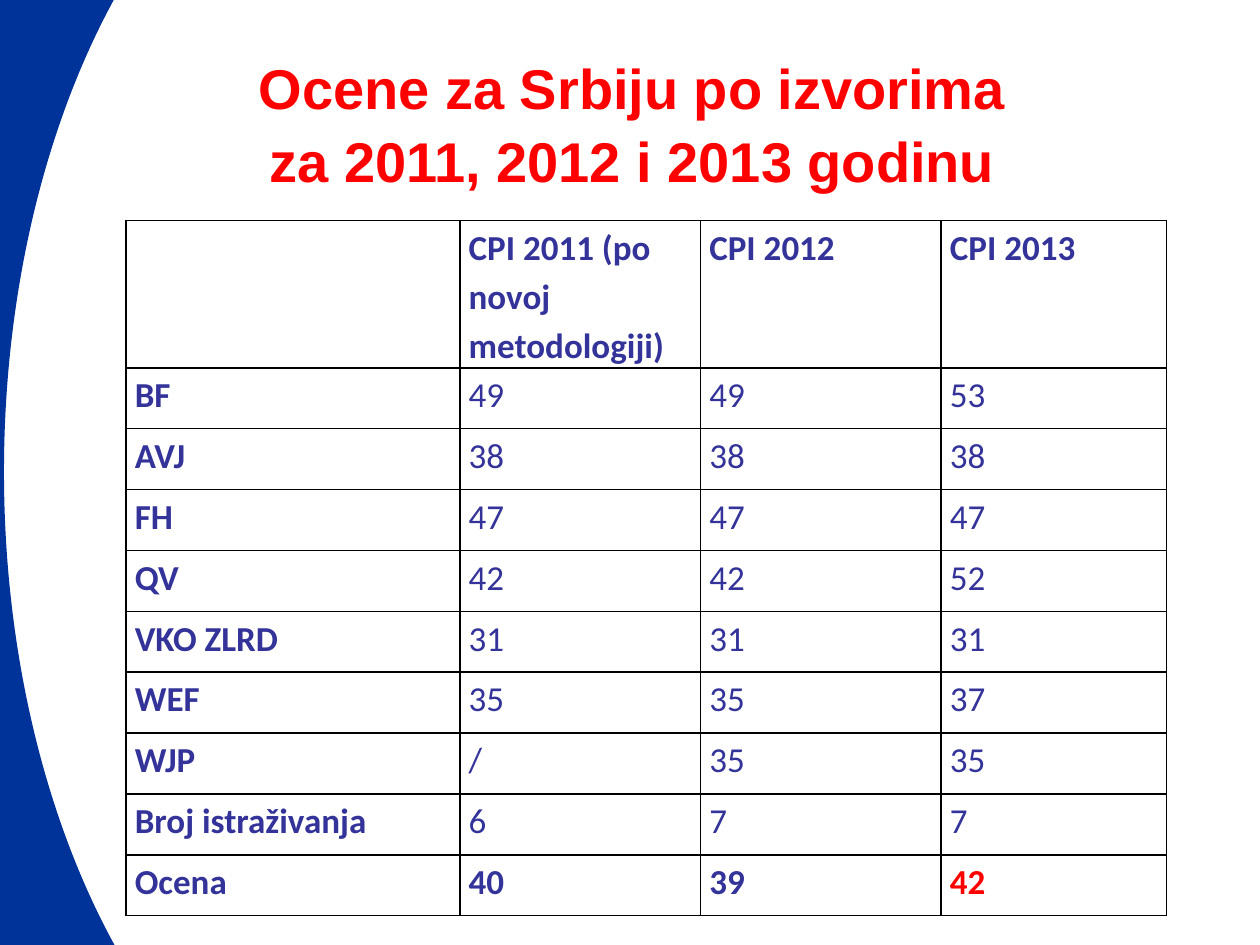
"""Build a slide with Serbia's CPI scores by source for 2011, 2012 and 2013."""
from dataclasses import dataclass

from lxml.etree import SubElement
from pptx import Presentation
from pptx.dml.color import RGBColor
from pptx.enum.shapes import MSO_AUTO_SHAPE_TYPE as ShapeType
from pptx.enum.text import MSO_VERTICAL_ANCHOR as Anchor, PP_PARAGRAPH_ALIGNMENT as Align
from pptx.oxml.ns import qn
from pptx.util import Inches, Pt


@dataclass(frozen=True)
class Theme:
    accent: RGBColor = RGBColor(0x00, 0x33, 0x99)
    body: RGBColor = RGBColor(0x33, 0x33, 0x99)
    highlight: RGBColor = RGBColor(0xFF, 0x00, 0x00)
    border: str = "000000"
    border_width: Pt = Pt(1)
    title_font: str = "Arial"
    table_font: str = "Calibri"
    title_size: Pt = Pt(32)
    title_spacing: Pt = Pt(42)
    table_size: Pt = Pt(20)
    table_spacing: float = 1.15


THEME = Theme()
TITLE = "Ocene za Srbiju po izvorima\vza 2011, 2012 i 2013 godinu"
COLUMN_WIDTHS = (2.65, 1.91, 1.91, 1.79)
HEADER_HEIGHT, BODY_HEIGHT = 1.17, 4.35
SCORES = (
    ("", "CPI 2011 (po novoj metodologiji)", "CPI 2012", "CPI 2013"),
    ("BF", "49", "49", "53"),
    ("AVJ", "38", "38", "38"),
    ("FH", "47", "47", "47"),
    ("QV", "42", "42", "52"),
    ("VKO ZLRD", "31", "31", "31"),
    ("WEF", "35", "35", "37"),
    ("WJP", "/", "35", "35"),
    ("Broj istraživanja", "6", "7", "7"),
    ("Ocena", "40", "39", "42"),
)


def apply(target, values):
    for name, value in values.items():
        setattr(target, name, value)


def write(para, text, color, para_format, font_format):
    para.text = text
    apply(para, para_format)
    for span in para.runs:
        apply(span.font, font_format)
        span.font.color.rgb = color


def add_moon(page):
    moon = page.shapes.add_shape(
        ShapeType.MOON, Inches(-1.33), Inches(-0.67), Inches(2.67), Inches(8.83))
    moon.adjustments[0] = 0.51
    moon.shadow.inherit = False
    moon.fill.solid()
    moon.fill.fore_color.rgb = THEME.accent
    moon.line.fill.background()


def add_title(page):
    box = page.shapes.add_textbox(Inches(0.77), Inches(0.33), Inches(8.5), Inches(1.25))
    apply(box.text_frame, {"word_wrap": True, "vertical_anchor": Anchor.MIDDLE})
    write(box.text_frame.paragraphs[0], TITLE, THEME.highlight,
          {"alignment": Align.CENTER, "line_spacing": THEME.title_spacing},
          {"name": THEME.title_font, "size": THEME.title_size, "bold": True})


def add_borders(cell):
    properties = cell._tc.get_or_add_tcPr()
    for side in ("lnL", "lnR", "lnT", "lnB"):
        line = SubElement(properties, qn(f"a:{side}"), w=str(THEME.border_width))
        fill = SubElement(line, qn("a:solidFill"))
        SubElement(fill, qn("a:srgbClr"), val=THEME.border)


def fill_cell(cell, text, bold, color):
    add_borders(cell)
    cell.fill.background()
    apply(cell, {"margin_left": Inches(0.07), "margin_right": Inches(0.07),
                 "margin_top": 0, "margin_bottom": 0})
    write(cell.text_frame.paragraphs[0], text, color,
          {"line_spacing": THEME.table_spacing},
          {"name": THEME.table_font, "size": THEME.table_size, "bold": bold})


def add_scores(page):
    last_row, last_column = len(SCORES) - 1, len(COLUMN_WIDTHS) - 1
    row_height = BODY_HEIGHT / last_row
    table = page.shapes.add_table(
        len(SCORES), len(COLUMN_WIDTHS), Inches(1), Inches(1.75),
        Inches(sum(COLUMN_WIDTHS)), Inches(HEADER_HEIGHT + BODY_HEIGHT)).table
    apply(table, {"first_row": False, "horz_banding": False})
    for column, width in zip(table.columns, COLUMN_WIDTHS):
        column.width = Inches(width)
    for r, values in enumerate(SCORES):
        table.rows[r].height = Inches(row_height if r else HEADER_HEIGHT)
        for c, text in enumerate(values):
            bold = r in (0, last_row) or c == 0
            is_final = (r, c) == (last_row, last_column)
            fill_cell(table.cell(r, c), text, bold,
                      THEME.highlight if is_final else THEME.body)


def main():
    deck = Presentation()
    apply(deck, {"slide_width": Inches(10), "slide_height": Inches(7.5)})
    page = deck.slides.add_slide(deck.slide_layouts[6])
    add_moon(page)
    add_title(page)
    add_scores(page)
    deck.save("out.pptx")


if __name__ == "__main__":
    main()
